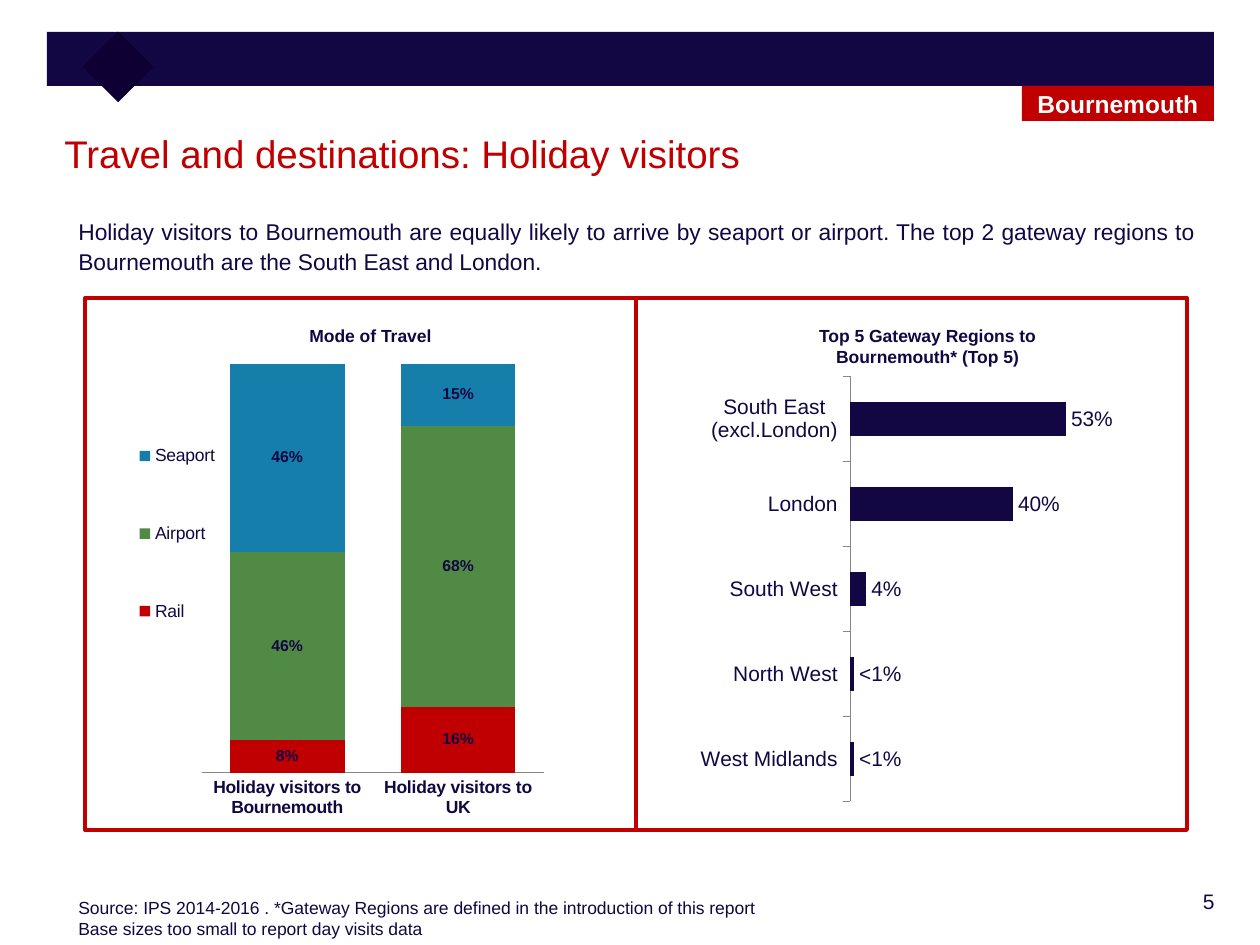
from lxml import etree
from pptx import Presentation
from pptx import util as u
from pptx.chart.data import CategoryChartData
from pptx.dml.color import RGBColor
from pptx.enum import chart as charts, shapes, text
from pptx.oxml import ns

NAVY = RGBColor(0x12, 0x07, 0x42)
DARK = RGBColor(0x0E, 0x00, 0x33)
RED = RGBColor(0xC0, 0x00, 0x00)
GREEN = RGBColor(0x51, 0x8A, 0x45)
BLUE = RGBColor(0x15, 0x7E, 0xAB)
GREY = RGBColor(0x86, 0x86, 0x86)
WHITE = RGBColor(0xFF, 0xFF, 0xFF)
FONT = "Arial"
SCALE = 914400 / 126
ALIGN = text.PP_ALIGN


def px(*lengths):
    """Turn pixel lengths into EMU."""
    return [u.Emu(round(length * SCALE)) for length in lengths]


def style_font(font, size, color=NAVY, bold=False):
    """Set face, size, colour and weight of a font."""
    font.name, font.size, font.bold = FONT, u.Pt(size), bold
    font.color.rgb = color


def add_text(page, place, lines, size, color=NAVY, bold=False, align=ALIGN.LEFT, spacing=None):
    """Add a wrapped text box with one paragraph per line."""
    frame = page.shapes.add_textbox(*px(*place)).text_frame
    frame.word_wrap = True
    frame.text = "\n".join(lines)
    for para in frame.paragraphs:
        para.alignment = align
        para.line_spacing = spacing
        style_font(para.font, size, color, bold)
    return frame


def add_box(page, place, fill=None, line=None):
    """Add a rectangle with a plain fill, an outline, or both."""
    box = page.shapes.add_shape(shapes.MSO_SHAPE.RECTANGLE, *px(*place))
    box.shadow.inherit = False
    if fill is None:
        box.fill.background()
    else:
        box.fill.solid()
        box.fill.fore_color.rgb = fill
    if line is None:
        box.line.fill.background()
    else:
        box.line.color.rgb = line
        box.line.width = u.Pt(2.25)
    return box


def add_tag(page, place, label):
    """Add a red tag with a centred white label."""
    frame = add_box(page, place, RED).text_frame
    frame.margin_top = frame.margin_bottom = 0
    frame.vertical_anchor = text.MSO_ANCHOR.MIDDLE
    frame.text = label
    para = frame.paragraphs[0]
    para.alignment = ALIGN.CENTER
    style_font(para.font, 14, WHITE, True)


def set_layout(holder, index, values, inner=False):
    """Give a plot area or legend a fixed place in its chart."""
    for old in holder.findall(ns.qn("c:layout")):
        holder.remove(old)
    layout = etree.Element(ns.qn("c:layout"))
    manual = etree.SubElement(layout, ns.qn("c:manualLayout"))
    settings = [("layoutTarget", "inner")] if inner else []
    settings += [("xMode", "edge"), ("yMode", "edge")]
    settings += zip("xywh", values)
    for name, value in settings:
        etree.SubElement(manual, ns.qn(f"c:{name}")).set("val", str(value))
    holder.insert(index, layout)


def add_chart(page, place, kind, categories, series, plot_place, gap, axis_font, label_font):
    """Add a percentage chart with labelled bars and a hidden value axis."""
    data = CategoryChartData(number_format="0%")
    data.categories = categories
    for name, values, _ in series:
        data.add_series(name, values)
    chart = page.shapes.add_chart(kind, *px(*place), data).chart
    chart.has_title = chart.has_legend = False
    style_font(chart.font, 10)
    set_layout(chart.element.chart.plotArea, 0, plot_place, inner=True)
    chart.value_axis.visible = False
    chart.value_axis.has_major_gridlines = False
    chart.value_axis.minimum_scale = 0
    axis = chart.category_axis
    axis.format.line.color.rgb = GREY
    style_font(axis.tick_labels.font, *axis_font)
    plot = chart.plots[0]
    plot.gap_width = gap
    plot.vary_by_categories = False
    for item, (_, _, color) in zip(plot.series, series):
        item.format.fill.solid()
        item.format.fill.fore_color.rgb = color
        labels = item.data_labels
        labels.show_value = True
        labels.number_format, labels.number_format_is_linked = "0%", False
        style_font(labels.font, *label_font)
    return chart


def add_travel_chart(page):
    """Add the stacked chart of travel modes."""
    series = [("Rail", (0.08, 0.16), RED), ("Airport", (0.46, 0.68), GREEN),
              ("Seaport", (0.46, 0.15), BLUE)]
    chart = add_chart(page, (113, 339, 444, 493), charts.XL_CHART_TYPE.COLUMN_STACKED_100,
                      ["Holiday visitors to Bournemouth", "Holiday visitors to UK"], series,
                      (0.2, 0.05, 0.77, 0.83), 49, (10, NAVY, True), (9, NAVY, True))
    chart.plots[0].overlap = 100
    chart.category_axis.major_tick_mark = charts.XL_TICK_MARK.NONE
    chart.has_legend = True
    chart.legend.position = charts.XL_LEGEND_POSITION.LEFT
    chart.legend.include_in_layout = False
    style_font(chart.legend.font, 10)
    set_layout(chart.element.chart.find(ns.qn("c:legend")), 1, (0.05, 0.1, 0.19, 0.59))


def add_gateway_chart(page):
    """Add the bar chart of gateway regions."""
    regions = ["South East (excl.London)", "London", "South West", "North West", "West Midlands"]
    chart = add_chart(page, (690, 358, 423, 462), charts.XL_CHART_TYPE.BAR_CLUSTERED, regions,
                      [("Series 1", (0.53, 0.4, 0.04, 0.01, 0.01), NAVY)],
                      (0.38, 0.04, 0.58, 0.92), 150, (12,), (12,))
    chart.value_axis.maximum_scale = 0.6
    chart.category_axis.reverse_order = True
    chart.category_axis.major_tick_mark = charts.XL_TICK_MARK.OUTSIDE
    bars = chart.plots[0].series[0]
    bars.data_labels.position = charts.XL_LABEL_POSITION.OUTSIDE_END
    for index in (3, 4):
        label = bars.points[index].data_label
        label.text_frame.text = "<1%"
        style_font(label.text_frame.paragraphs[0].runs[0].font, 12)
        label.position = charts.XL_LABEL_POSITION.OUTSIDE_END


def main():
    """Build the slide and save it."""
    deck = Presentation()
    deck.slide_width, deck.slide_height = px(1260, 945)
    page = deck.slides.add_slide(deck.slide_layouts[6])
    add_text(page, (1075, 882, 152, 45), ["5"], 12, align=ALIGN.RIGHT)
    add_box(page, (47, 32, 1167, 54), NAVY)
    add_box(page, (93, 42, 50, 50), DARK).rotation = 45
    title = add_text(page, (52, 120, 1160, 77), ["Travel and destinations: Holiday visitors"], 22, RED)
    title.margin_top = px(10)[0]
    add_text(page, (297, 319, 185, 39), ["Mode of Travel"], 10, bold=True)
    add_text(page, (66, 210, 1140, 93), [
        "Holiday visitors to Bournemouth are equally likely to arrive by seaport or airport. "
        "The top 2 gateway regions to Bournemouth are the South East and London."],
        13, align=ALIGN.JUSTIFY, spacing=1.07)
    add_travel_chart(page)
    add_text(page, (794, 319, 267, 58), ["Top 5 Gateway Regions to Bournemouth* (Top 5)"],
             10, bold=True, align=ALIGN.CENTER)
    add_text(page, (66, 891, 1144, 55), [
        "Source: IPS 2014-2016 . *Gateway Regions are defined in the introduction of this report",
        "Base sizes too small to report day visits data"], 10)
    add_gateway_chart(page)
    for column in range(2):
        add_box(page, (85 + 551 * column, 298, 551, 532), line=RED)
    add_tag(page, (1022, 86, 192, 35), "Bournemouth")
    deck.save("out.pptx")


if __name__ == "__main__":
    main()
